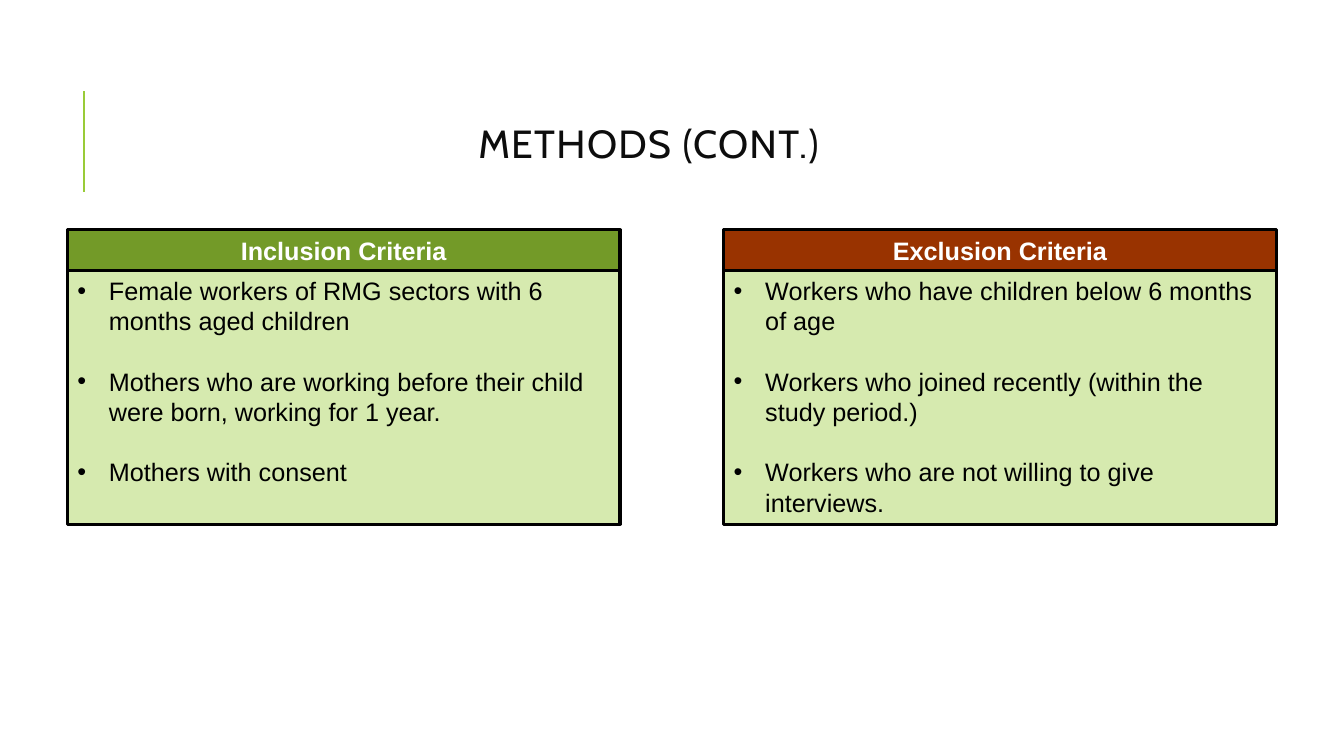
"""Build the inclusion and exclusion criteria slide."""
from dataclasses import dataclass

from lxml.etree import SubElement
from pptx import Presentation
from pptx.dml.color import RGBColor
from pptx.enum.shapes import MSO_CONNECTOR, MSO_SHAPE
from pptx.enum.text import MSO_ANCHOR, PP_ALIGN
from pptx.oxml.ns import qn
from pptx.util import Pt

LEFTS = (48.24, 517)
HEADER_TOP, HEADER_HEIGHT = 164.2, 28.8
BODY_HEIGHT, PANEL_WIDTH = 181.4, 394.6
LINE_PITCH, HANG = 21.6, 22.5
BODY_FILL = "D6EAAF"
BODY_FONT = {"name": "Arial", "size": Pt(18), "bold": False}
HEADER_FONT = BODY_FONT | {"bold": True}
TITLE_FONT = {"name": "Cabin", "size": Pt(28), "bold": False}


@dataclass
class Panel:
    """A headed list of criteria."""
    header: str
    color: str
    items: tuple[str, ...]


PANELS = (
    Panel("Inclusion Criteria", "739A28", (
        "Female workers of RMG sectors with 6 months aged children",
        "Mothers who are working before their child were born, working for 1 year.",
        "Mothers with consent",
    )),
    Panel("Exclusion Criteria", "993300", (
        "Workers who have children below 6 months of age",
        "Workers who joined recently (within the study period.)",
        "Workers who are not willing to give interviews.",
    )),
)


def rgb(value: str) -> RGBColor:
    """Return the colour for a hex string."""
    return RGBColor.from_string(value)


def add_run(p, text: str, font: dict, color: str):
    """Add a formatted run to a paragraph."""
    r = p.add_run()
    r.text = text
    for name, value in font.items():
        setattr(r.font, name, value)
    r.font.color.rgb = rgb(color)
    return r


def add_box(s, left: float, top: float, height: float, fill: str):
    """Add an outlined box and return its text frame."""
    sp = s.shapes.add_shape(MSO_SHAPE.RECTANGLE, Pt(left), Pt(top), Pt(PANEL_WIDTH), Pt(height))
    sp.shadow.inherit = False
    sp.fill.solid()
    sp.fill.fore_color.rgb = rgb(fill)
    sp.line.color.rgb = rgb("000000")
    sp.line.width = Pt(2.25)
    tf = sp.text_frame
    tf.word_wrap = True
    tf.vertical_anchor = MSO_ANCHOR.TOP
    return tf


def set_bullet(p) -> None:
    """Give a paragraph a hanging round bullet."""
    pPr = p._p.get_or_add_pPr()
    pPr.set("marL", str(Pt(HANG)))
    pPr.set("indent", str(-Pt(HANG)))
    SubElement(pPr, qn("a:buFont")).set("typeface", "Arial")
    SubElement(pPr, qn("a:buChar")).set("char", "•")


def add_panel(s, panel: Panel, left: float) -> None:
    """Draw the list of a panel and then its header."""
    tf = add_box(s, left, HEADER_TOP + HEADER_HEIGHT, BODY_HEIGHT, BODY_FILL)
    for i, item in enumerate(panel.items):
        p = tf.add_paragraph() if i else tf.paragraphs[0]
        p.alignment = PP_ALIGN.LEFT
        p.line_spacing = Pt(LINE_PITCH)
        p.space_before = Pt(LINE_PITCH if i else 0)
        set_bullet(p)
        add_run(p, item, BODY_FONT, "000000")
    p = add_box(s, left, HEADER_TOP, HEADER_HEIGHT, panel.color).paragraphs[0]
    p.alignment = PP_ALIGN.CENTER
    p.line_spacing = Pt(LINE_PITCH)
    add_run(p, panel.header, HEADER_FONT, "FFFFFF")


def add_title(s, text: str) -> None:
    """Place and format the title."""
    sp = s.shapes.title
    sp.left, sp.top, sp.width, sp.height = Pt(80.64), Pt(46.08), Pt(765.36), Pt(118.08)
    tf = sp.text_frame
    tf.word_wrap = True
    tf.vertical_anchor = MSO_ANCHOR.MIDDLE
    p = tf.paragraphs[0]
    p.alignment = PP_ALIGN.CENTER
    p.line_spacing = 0.8
    r = add_run(p, text, TITLE_FONT, "0D0D0D")
    r._r.get_or_add_rPr().set("spc", "100")


def add_accent_line(s) -> None:
    """Draw the vertical line left of the title."""
    line = s.shapes.add_connector(MSO_CONNECTOR.STRAIGHT, Pt(60), Pt(136.8), Pt(60), Pt(64.8))
    line.line.color.rgb = rgb("99CB38")
    line.line.width = Pt(1.5)
    SubElement(line._element.spPr, qn("a:effectLst"))


def main() -> None:
    """Build and save the slide."""
    prs = Presentation()
    prs.slide_width, prs.slide_height = Pt(960), Pt(540)
    s = prs.slides.add_slide(prs.slide_layouts[5])
    add_accent_line(s)
    add_title(s, "METHODS (CONT.)")
    for panel, left in zip(PANELS, LEFTS):
        add_panel(s, panel, left)
    prs.save("out.pptx")


if __name__ == "__main__":
    main()
